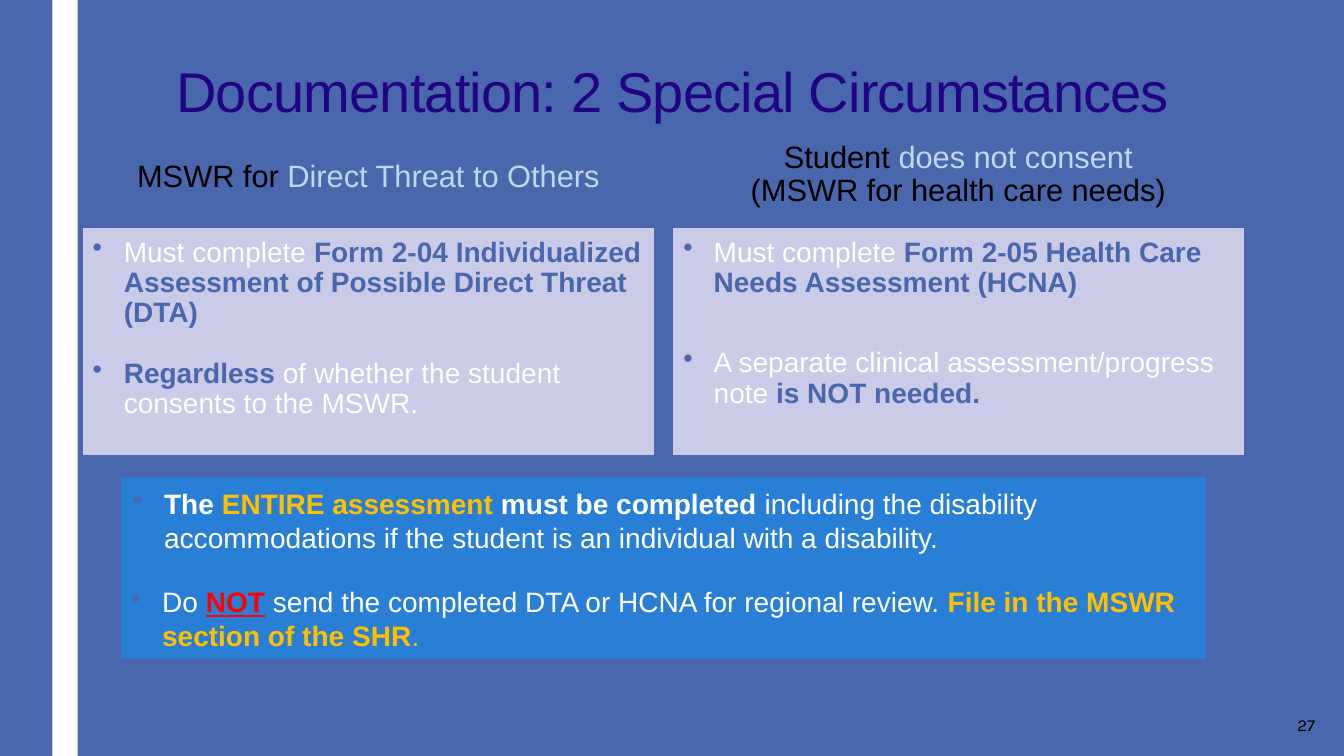
from dataclasses import dataclass

from lxml.etree import SubElement
from pptx import Presentation
from pptx.dml.color import RGBColor
from pptx.enum.shapes import MSO_SHAPE
from pptx.enum.text import MSO_ANCHOR, PP_ALIGN
from pptx.oxml.ns import qn
from pptx.util import Inches, Pt


@dataclass(frozen=True)
class Theme:
    blue: str = "4A66AC"
    white: str = "FFFFFF"
    black: str = "000000"
    lilac: str = "C9CBE7"
    pale: str = "C0D8ED"
    navy: str = "200583"
    bright: str = "297FD5"
    gold: str = "FFC000"
    red: str = "FF0000"
    font: str = "Arial"
    alt: str = "Karla"
    title: int = 40
    head: int = 22
    body: int = 20
    small: int = 12


class Deck:
    """Draws on one slide; every box is (left, top, width, height) in percent."""

    def __init__(self, theme):
        self.theme = theme
        self.show = Presentation()
        self.show.slide_width = Inches(13.33)
        self.show.slide_height = Inches(7.5)
        self.slide = self.show.slides.add_slide(self.show.slide_layouts[6])
        self.paint(self.slide.background.fill, theme.blue)

    def paint(self, fill, color):
        fill.solid()
        fill.fore_color.rgb = RGBColor.from_string(color)

    def place(self, box):
        wide, high = self.show.slide_width, self.show.slide_height
        return [int(part * full / 100)
                for part, full in zip(box, (wide, high, wide, high))]

    def rect(self, box, fill, line=None):
        shape = self.slide.shapes.add_shape(MSO_SHAPE.RECTANGLE, *self.place(box))
        shape.shadow.inherit = False
        self.paint(shape.fill, fill)
        if line:
            self.paint(shape.line.fill, line)
            shape.line.width = Pt(0.75)
        else:
            shape.line.fill.background()
        return self.frame(shape)

    def label(self, box):
        return self.frame(self.slide.shapes.add_textbox(*self.place(box)))

    def frame(self, shape):
        text = shape.text_frame
        text.word_wrap = True
        text.vertical_anchor = MSO_ANCHOR.TOP
        return text

    def para(self, text, runs, size, align=PP_ALIGN.LEFT, font=None,
             lines=None, before=0, after=0, hang=None, track=0):
        """Add a paragraph of (words, colour, marks) runs; hang makes a bullet."""
        first = text.paragraphs[0]
        para = first if not first.runs else text.add_paragraph()
        if hang:
            self.bullet(para, *hang)
        para.alignment = align
        para.line_spacing = lines
        para.space_before, para.space_after = Pt(before), Pt(after)
        para.font.name, para.font.size = font or self.theme.font, Pt(size)
        for words, color, *marks in runs:
            run = para.add_run()
            run.text = words
            run.font.name, run.font.size = para.font.name, para.font.size
            run.font.color.rgb = RGBColor.from_string(color)
            run.font.bold = "bold" in marks
            run.font.underline = "under" in marks
            if track:
                run._r.get_or_add_rPr().set("spc", str(int(track * 100)))

    def bullet(self, para, left, first):
        props = para._p.get_or_add_pPr()
        props.set("marL", str(Inches(left)))
        props.set("indent", str(Inches(first)))
        color = SubElement(props, qn("a:buClr"))
        SubElement(color, qn("a:srgbClr")).set("val", self.theme.blue)
        SubElement(props, qn("a:buChar")).set("char", "•")

    def card(self, box, fill, items, lines=None):
        """Draw a filled box of bullets: (runs, space after, hang) each."""
        text = self.rect(box, fill, self.theme.blue)
        text.margin_top = text.margin_bottom = Inches(0.1)
        for runs, after, hang in items:
            self.para(text, runs, self.theme.body, lines=lines,
                      after=after, hang=hang)


def main():
    t = Theme()
    deck = Deck(t)
    deck.rect((3.9, 0, 1.88, 100), t.white)

    page = deck.label((86.05, 93.2, 12.53, 5.33))
    page.vertical_anchor = MSO_ANCHOR.MIDDLE
    deck.para(page, [("27", t.black)], t.small, PP_ALIGN.RIGHT, t.alt, after=6)

    left, step, wide = 6.15, 43.89, 42.53
    near, far = (0.31, -0.31), (0.31, -0.3)
    cards = [
        [([("Must complete ", t.white),
           ("Form 2-04 Individualized Assessment of Possible Direct Threat (DTA)",
            t.blue, "bold")], 22, near),
         ([("Regardless ", t.blue, "bold"),
           ("of whether the student consents to the MSWR.", t.white)], 22, near)],
        [([("Must complete ", t.white),
           ("Form 2-05 Health Care Needs Assessment (HCNA)", t.blue, "bold")],
          36, far),
         ([("A separate clinical assessment/progress note ", t.white),
           ("is NOT needed.", t.blue, "bold")], 12, far)],
    ]
    heads = [
        (MSO_ANCHOR.MIDDLE, 12,
         [[("MSWR for ", t.black), ("Direct Threat to Others", t.pale)]]),
        (MSO_ANCHOR.TOP, 0,
         [[("Student ", t.black), ("does not consent", t.pale)],
          [("(MSWR for health care needs)", t.black)]]),
    ]
    for col, (items, (anchor, before, rows)) in enumerate(zip(cards, heads)):
        x = left + col * step
        deck.card((x, 30.13, wide, 30.13), t.lilac, items, lines=0.9)
        head = deck.rect((x, 18.13, wide, 10.67), t.blue, t.blue)
        head.vertical_anchor = anchor
        for runs in rows:
            deck.para(head, runs, t.head, PP_ALIGN.CENTER,
                      lines=0.9, before=before)

    title = deck.label((7.73, 6.8, 84.62, 10.67))
    deck.para(title, [("Documentation: 2 Special Circumstances", t.navy)],
              t.title, PP_ALIGN.CENTER, track=-0.6)

    deck.card((9, 63.07, 80.8, 24.13), t.bright, [
        ([("The ", t.white, "bold"),
          ("ENTIRE assessment ", t.gold, "bold"),
          ("must be completed ", t.white, "bold"),
          ("including the disability accommodations if the student is an "
           "individual with a disability.", t.white)], 22, (0.33, -0.31)),
        ([("Do ", t.white),
          ("NOT", t.red, "bold", "under"),
          (" send the completed DTA or HCNA for regional review. ", t.white),
          ("File in the MSWR section of the SHR", t.gold, "bold"),
          (".", t.gold)], 12, near),
    ])
    deck.show.save("out.pptx")


if __name__ == "__main__":
    main()
